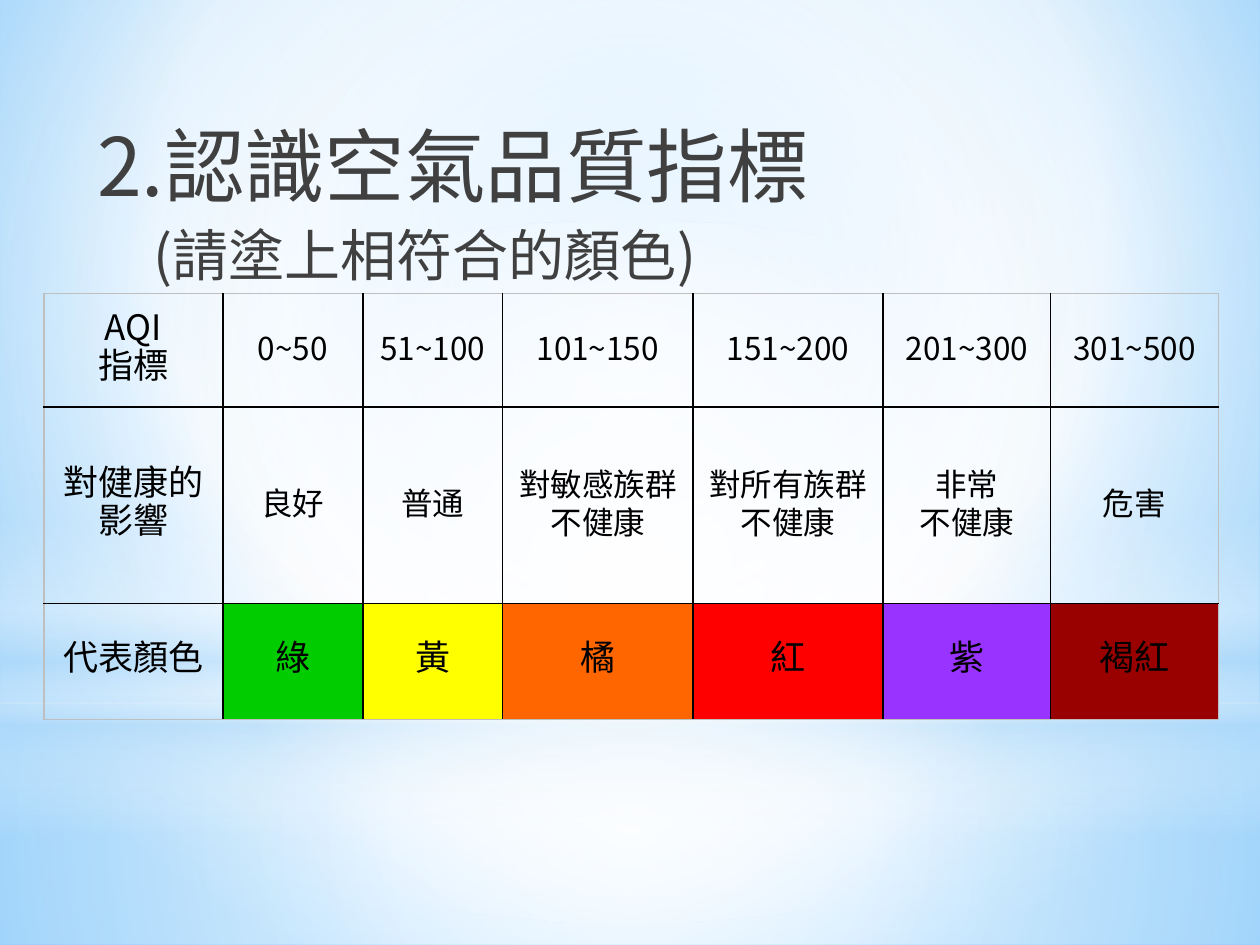
"""Build a slide that shows the air quality index as a coloured table."""
from lxml.etree import SubElement
from pptx import Presentation
from pptx.dml.color import RGBColor
from pptx.enum.shapes import MSO_SHAPE as Shape
from pptx.enum.text import MSO_ANCHOR as Anchor, PP_ALIGN as Align
from pptx.oxml import parse_xml
from pptx.oxml.ns import nsdecls, qn
from pptx.util import Inches, Pt

hue = RGBColor.from_string
JP, SC = "Noto Sans CJK JP", "Noto Sans CJK SC"


def grad(old, stops, rect=None):
    """Replace a solid fill by a gradient: round about rect, or else downward."""
    marks = "".join(
        f'<a:gs pos="{pos * 1000}"><a:srgbClr val="{tone}">'
        f'<a:alpha val="{alpha * 1000}"/></a:srgbClr></a:gs>'
        for pos, tone, alpha in stops)
    way = '<a:lin ang="5400000" scaled="0"/>'
    if rect:
        sides = " ".join(f'{k}="{v * 1000}"' for k, v in zip("ltrb", rect))
        way = f'<a:path path="circle"><a:fillToRect {sides}/></a:path>'
    new = parse_xml(f'<a:gradFill {nsdecls("a")} rotWithShape="1">'
                    f'<a:gsLst>{marks}</a:gsLst>{way}</a:gradFill>')
    old.getparent().replace(old, new)


def write(para, text, size, face, tone):
    """Add text to a paragraph, one run to a line."""
    for i, line in enumerate(text.split("\n")):
        if i:
            para.add_line_break()
        run = para.add_run()
        run.text = line
        run.font.size, run.font.name = Pt(size), face
        run.font.color.rgb = hue(tone)
        SubElement(run.font._element, qn("a:ea"), typeface=face)


deck = Presentation()
deck.slide_width, deck.slide_height = Inches(10), Inches(7.5)
wide, high = deck.slide_width, deck.slide_height
slide = deck.slides.add_slide(deck.slide_layouts[5])

slide.background.fill.solid()
grad(slide.element.xpath(".//p:bgPr/a:solidFill")[0],
     [(0, "9ED5FF", 100), (60, "FFFFFF", 100), (100, "5BB9FF", 100)],
     (20, 10, 20, 60))

mid = (50, 50, 50, 50)
veils = [
    (Shape.RECTANGLE, 0.744, 0.256, mid,
     [(0, "FFFFFF", 91), (37, "FFFFFF", 76), (100, "B4DCFA", 79)]),
    (Shape.RECTANGLE, 0, 0.744, mid,
     [(0, "FFFFFF", 89), (48, "FFFFFF", 62), (100, "B4DCFA", 79)]),
    (Shape.RECTANGLE, 0.55, 0.333, None,
     [(0, "FFFFFF", 0), (29, "FFFFFF", 30), (45, "B4DCFA", 40),
      (55, "FFFFFF", 26), (65, "B4DCFA", 60), (100, "FFFFFF", 0)]),
    (Shape.OVAL, 0.233, 0.744, mid, [(0, "FFFFFF", 100), (56, "FFFFFF", 0)]),
]
for kind, top, tall, rect, stops in veils:
    veil = slide.shapes.add_shape(kind, 0, int(top * high), wide, int(tall * high))
    veil.shadow.inherit = False
    veil.line.fill.background()
    veil.fill.solid()
    grad(veil.element.spPr.find(qn("a:solidFill")), stops, rect)

title = slide.shapes.title
slide.shapes._spTree.append(title.element)
title.left, title.top = Inches(0.67), Inches(0.68)
title.width, title.height = Inches(9), Inches(1.65)
frame = title.text_frame
frame.word_wrap, frame.vertical_anchor = True, Anchor.BOTTOM
head, hint = frame.paragraphs[0], frame.add_paragraph()
head.alignment = hint.alignment = Align.LEFT
hint.space_before = Pt(4)
hint._p.get_or_add_pPr().set("marL", str(Inches(0.45)))
write(head, "2.認識空氣品質指標", 46, JP, "404040")
write(hint, "(請塗上相符合的顏色)", 32, JP, "404040")

cols = [1.42, 1.11, 1.11, 1.51, 1.51, 1.33, 1.33]
rows = [0.9, 1.56, 0.92]
words = [
    [["AQI", "指標"], ["0~50"], ["51~100"], ["101~150"], ["151~200"],
     ["201~300"], ["301~500"]],
    [["對健康的", "影響"], ["良好"], ["普通"], ["對敏感族群\n不健康"],
     ["對所有族群\n不健康"], ["非常\n不健康"], ["危害"]],
    [["代表顏色"], ["綠"], ["黃"], ["橘"], ["紅"], ["紫"], ["褐紅"]],
]
sizes, faces = [18, 18, 20], [SC, JP, SC]
tints = ["00CC00", "FFFF00", "FF6600", "FF0000", "9933FF", "990000"]

table = slide.shapes.add_table(
    len(rows), len(cols), Inches(0.35), Inches(2.33),
    Inches(sum(cols)), Inches(sum(rows))).table
table.first_row = table.horz_banding = False
for col, size in zip(table.columns, cols):
    col.width = Inches(size)
for row, size in zip(table.rows, rows):
    row.height = Inches(size)

for r, line in enumerate(words):
    for c, parts in enumerate(line):
        cell = table.cell(r, c)
        cell.vertical_anchor = Anchor.MIDDLE
        cell.margin_left = cell.margin_right = Inches(0.06)
        cell.margin_top = cell.margin_bottom = 0
        if r == 2 and c:
            cell.fill.solid()
            cell.fill.fore_color.rgb = hue(tints[c - 1])
        else:
            cell.fill.background()
        for i, part in enumerate(parts):
            frame = cell.text_frame
            para = frame.add_paragraph() if i else frame.paragraphs[0]
            para.alignment, para.line_spacing = Align.CENTER, Pt(22)
            write(para, part, sizes[r] if c else 20, faces[r] if c else JP, "000000")
        edges = {"L": c == 0, "R": c == len(cols) - 1,
                 "T": r == 0, "B": r == len(rows) - 1}
        for i, (side, outer) in enumerate(edges.items()):
            tone = "BFBFBF" if outer else "000000"
            cell._tc.get_or_add_tcPr().insert(i, parse_xml(
                f'<a:ln{side} {nsdecls("a")} w="{Pt(1)}"><a:solidFill>'
                f'<a:srgbClr val="{tone}"/></a:solidFill></a:ln{side}>'))

deck.save("out.pptx")
